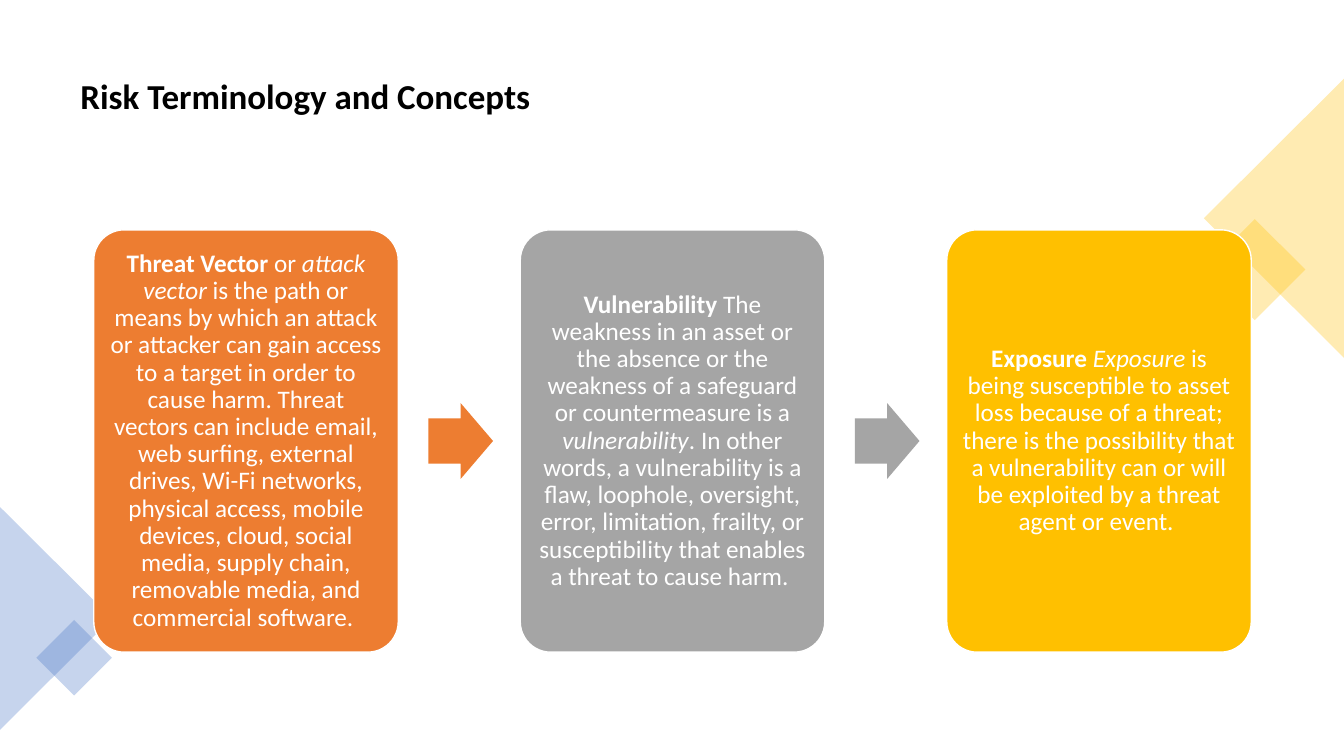
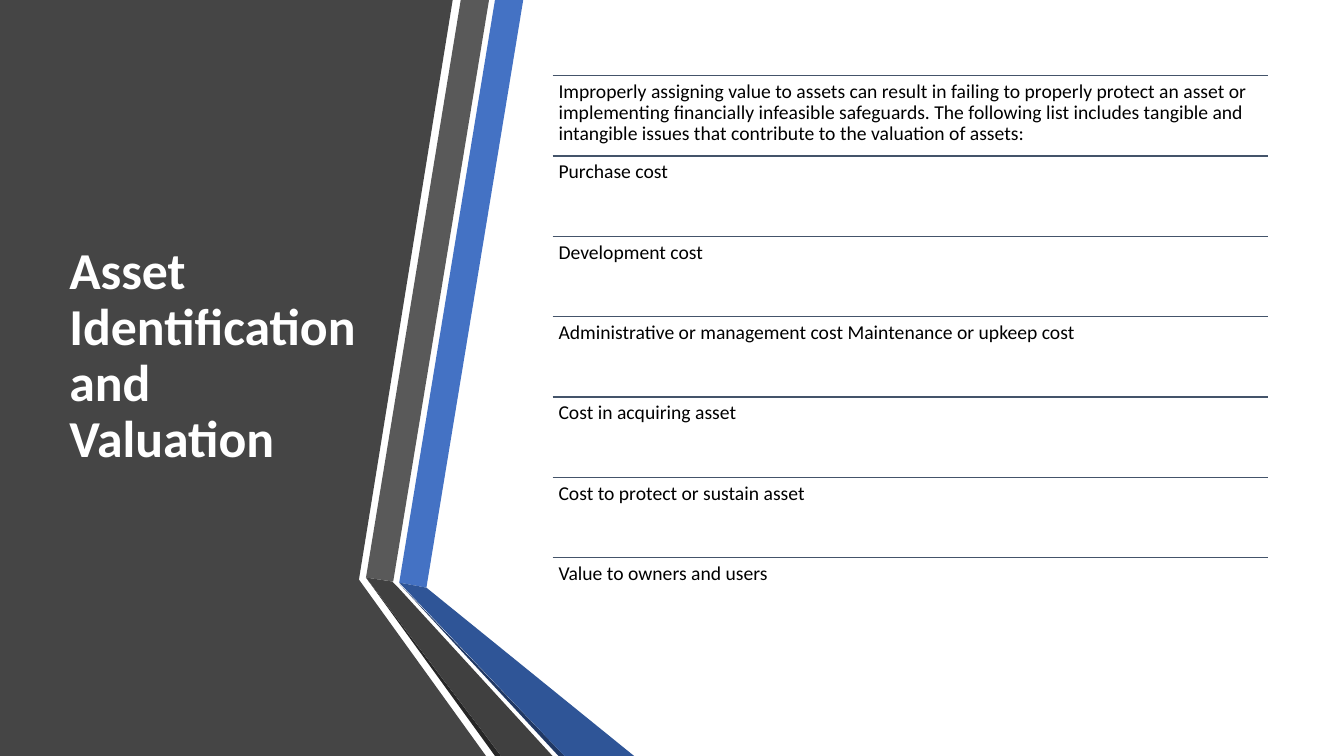
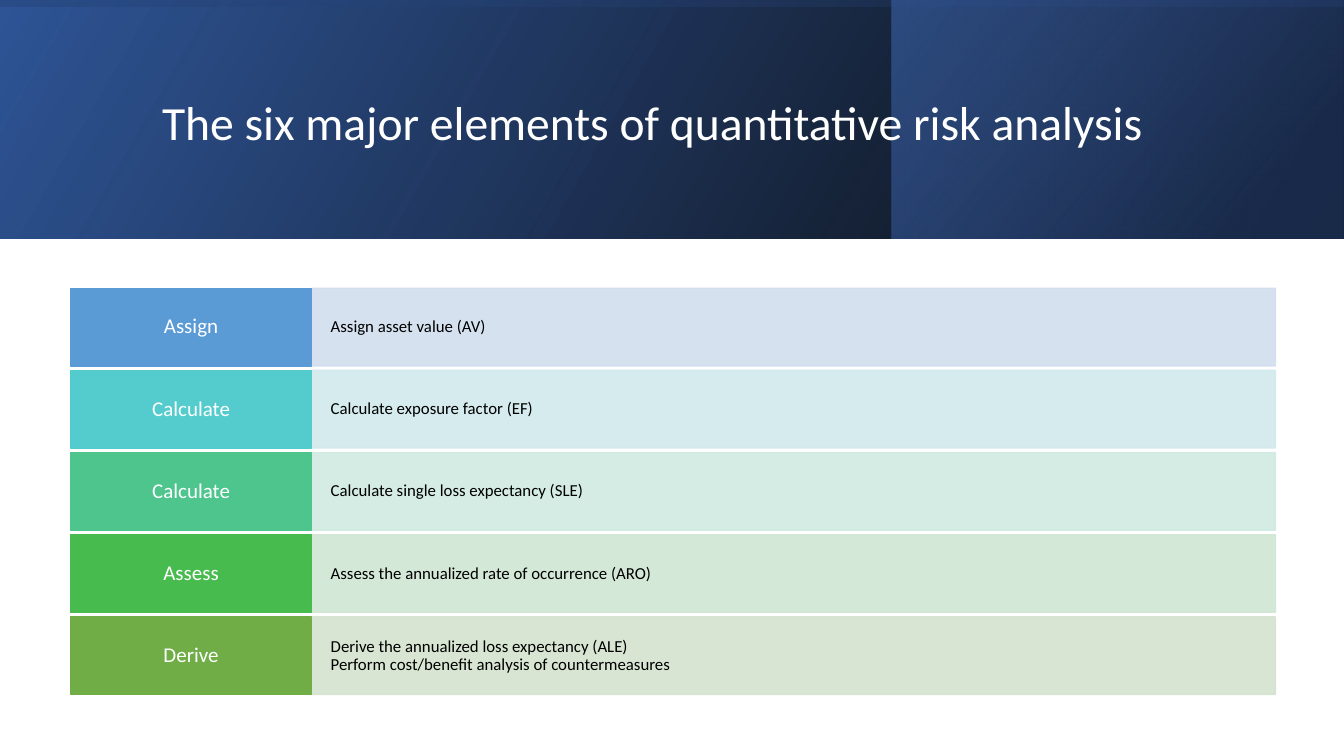
from lxml.etree import SubElement
from pptx import Presentation
from pptx.dml.color import RGBColor
from pptx.enum.shapes import MSO_CONNECTOR, MSO_SHAPE
from pptx.enum.text import MSO_ANCHOR, PP_ALIGN
from pptx.oxml.ns import qn
from pptx.util import Inches, Pt

FONT = "Calibri"
BLACK = RGBColor(0x00, 0x00, 0x00)
WHITE = RGBColor(0xFF, 0xFF, 0xFF)
BLUE = RGBColor(0x44, 0x72, 0xC4)
ROYAL = RGBColor(0x2F, 0x55, 0x97)
NAVY = RGBColor(0x20, 0x38, 0x64)
SLATE = RGBColor(0x44, 0x54, 0x6A)
ORANGE = RGBColor(0xED, 0x7D, 0x31)
SILVER = RGBColor(0xA5, 0xA5, 0xA5)
GOLD = RGBColor(0xFF, 0xC0, 0x00)
PANEL = RGBColor(0x45, 0x45, 0x45)
GREY = RGBColor(0x59, 0x59, 0x59)
DARK = RGBColor(0x40, 0x40, 0x40)
INK = RGBColor(0x26, 0x26, 0x26)

CARDS = [
    (ORANGE, [
        ("Threat Vector ", "b"), ("or ", ""), ("attack vector ", "i"),
        ("is the path or means by which an attack or attacker can gain access "
         "to a target in order to cause harm. Threat vectors can include email, "
         "web surfing, external drives, Wi-Fi networks, physical access, mobile "
         "devices, cloud, social media, supply chain, removable media, and "
         "commercial software. ", "")]),
    (SILVER, [
        ("Vulnerability ", "b"),
        ("The weakness in an asset or the absence or the weakness of a "
         "safeguard or countermeasure is a ", ""), ("vulnerability", "i"),
        (". In other words, a vulnerability is a flaw, loophole, oversight, "
         "error, limitation, frailty, or susceptibility that enables a threat "
         "to cause harm. ", "")]),
    (GOLD, [
        ("Exposure ", "b"), ("Exposure ", "i"),
        ("is being susceptible to asset loss because of a threat; there is the "
         "possibility that a vulnerability can or will be exploited by a threat "
         "agent or event. ", "")]),
]

COSTS = [
    "Improperly assigning value to assets can result in failing to properly "
    "protect an asset or implementing financially infeasible safeguards. The "
    "following list includes tangible and intangible issues that contribute to "
    "the valuation of assets:",
    "Purchase cost",
    "Development cost",
    "Administrative or management cost Maintenance or upkeep cost",
    "Cost in acquiring asset",
    "Cost to protect or sustain asset",
    "Value to owners and users",
]

STEPS = [
    ("Assign", ["Assign asset value (AV)"],
     RGBColor(0x5B, 0x9B, 0xD5), RGBColor(0xD2, 0xDE, 0xEF)),
    ("Calculate", ["Calculate exposure factor (EF)"],
     RGBColor(0x54, 0xCC, 0xCD), RGBColor(0xD1, 0xE9, 0xED)),
    ("Calculate", ["Calculate single loss expectancy (SLE)"],
     RGBColor(0x4D, 0xC5, 0x8D), RGBColor(0xD0, 0xEA, 0xE1)),
    ("Assess", ["Assess the annualized rate of occurrence (ARO)"],
     RGBColor(0x48, 0xBB, 0x4F), RGBColor(0xD0, 0xE6, 0xD4)),
    ("Derive", ["Derive the annualized loss expectancy (ALE)",
                "Perform cost/benefit analysis of countermeasures"],
     RGBColor(0x70, 0xAD, 0x47), RGBColor(0xD5, 0xE3, 0xCF)),
]

BANDS = [
    (PANEL, [(0, 0), (4.49, 0), (3.56, 5.75), (4.82, 7.5), (0, 7.5)]),
    (BLUE, [(3.96, 5.78), (4.23, 5.83), (5.19, 0), (4.91, 0)]),
    (GREY, [(4.85, 0), (4.57, 0), (3.63, 5.73), (3.9, 5.77)]),
    (INK, [(3.63, 5.73), (4.91, 7.5), (4.97, 7.5)]),
    (NAVY, [(3.96, 5.79), (5.54, 7.5), (5.6, 7.5)]),
    (ROYAL, [(3.96, 5.78), (5.6, 7.5), (6.29, 7.5), (4.23, 5.83)]),
    (DARK, [(5.48, 7.5), (3.95, 5.83), (3.89, 5.77), (3.63, 5.73), (4.97, 7.5)]),
]


def write(shape, paras, size=18, color=BLACK, bold=False, align=PP_ALIGN.LEFT,
          anchor=MSO_ANCHOR.MIDDLE, inset=(0.1, 0.05)):
    frame = shape.text_frame
    frame.word_wrap = True
    frame.vertical_anchor = anchor
    frame.margin_left = frame.margin_right = Inches(inset[0])
    frame.margin_top = frame.margin_bottom = Inches(inset[1])
    for num, runs in enumerate(paras):
        para = frame.add_paragraph() if num else frame.paragraphs[0]
        para.alignment = align
        para.line_spacing = 0.9
        if isinstance(runs, str):
            runs = [(runs, "b" if bold else "")]
        for words, mark in runs:
            run = para.add_run()
            run.text = words
            font = run.font
            font.name, font.size, font.color.rgb = FONT, Pt(size), color
            font.bold, font.italic = mark == "b", mark == "i"


def label(slide, box, paras, **style):
    write(slide.shapes.add_textbox(*map(Inches, box)), paras, **style)


def fade(shape, *shares):
    for tone, share in zip(shape.element.spPr.iter(qn("a:srgbClr")), shares):
        SubElement(tone, qn("a:alpha")).set("val", str(share * 1000))


def paint(shape, fill=None, line=None):
    shape.shadow.inherit = False
    if fill is not None:
        shape.fill.solid()
        shape.fill.fore_color.rgb = fill
    if line is None:
        shape.line.fill.background()
    else:
        shape.line.color.rgb = line
        shape.line.width = Pt(1)


def block(slide, kind, box, fill=None, line=None, turn=0):
    shape = slide.shapes.add_shape(kind, *map(Inches, box))
    shape.rotation = turn
    paint(shape, fill, line)
    return shape


def blend(slide, box, angle, stops):
    shape = block(slide, MSO_SHAPE.RECTANGLE, box)
    shape.fill.gradient()
    shape.fill.gradient_angle = angle
    for stop, (place, color, _) in zip(shape.fill.gradient_stops, stops):
        stop.position = place
        stop.color.rgb = color
    fade(shape, *[share for _, _, share in stops])


def rule(slide, left, top, width):
    line = slide.shapes.add_connector(
        MSO_CONNECTOR.STRAIGHT, Inches(left), Inches(top),
        Inches(left + width), Inches(top))
    line.line.color.rgb = SLATE
    line.line.width = Pt(1)
    SubElement(line.element.spPr, qn("a:effectLst"))


def corners(slide):
    for kind, box, turn, color in [
        (MSO_SHAPE.RECTANGLE, (12.09, 2.32, 0.71, 0.71), 45, GOLD),
        (MSO_SHAPE.ISOSCELES_TRIANGLE, (11.25, 1.47, 2.77, 1.39), 270, GOLD),
        (MSO_SHAPE.ISOSCELES_TRIANGLE, (-0.55, 5.58, 2.21, 1.11), 90, BLUE),
        (MSO_SHAPE.RECTANGLE, (0.47, 6.26, 0.53, 0.53), 45, BLUE),
    ]:
        fade(block(slide, kind, box, color, turn=turn), 30)


def flow(slide, left, top, width, height):
    card = 3.02
    pitch = (width - card) / (len(CARDS) - 1)
    for num, (color, runs) in enumerate(CARDS):
        x = left + num * pitch
        shape = block(slide, MSO_SHAPE.ROUNDED_RECTANGLE,
                      (x, top, card, height), color, WHITE)
        shape.adjustments[0] = 0.1
        write(shape, [runs], color=WHITE, align=PP_ALIGN.CENTER,
              inset=(0.07, 0.07))
        if num < len(CARDS) - 1:
            arrow = block(slide, MSO_SHAPE.RIGHT_ARROW,
                          (x + card + 0.3, top + height / 2 - 0.375, 0.64, 0.75),
                          color)
            arrow.adjustments[0] = 0.6
            arrow.adjustments[1] = 0.5


def bands(slide):
    for color, points in BANDS:
        spots = [(Inches(x), Inches(y)) for x, y in points]
        path = slide.shapes.build_freeform(*spots[0])
        path.add_line_segments(spots[1:])
        paint(path.convert_to_shape(), color)


def ledger(slide, left, top, width, height):
    pitch = height / len(COSTS)
    for num, cost in enumerate(COSTS):
        y = top + num * pitch
        rule(slide, left, y, width)
        label(slide, (left, y, width, pitch), [cost], size=14,
              anchor=MSO_ANCHOR.TOP, inset=(0.06, 0.06))


def banner(slide, left, top, width, height):
    blend(slide, (left, top, width, height), 150,
          [(0, BLACK, 96), (1, ROYAL, 100)])
    blend(slide, (left + 8.84, top, 4.48, height), 140,
          [(0.19, NAVY, 68), (1, BLUE, 48)])
    blend(slide, (left, top, width, height), 260,
          [(0.23, ROYAL, 16), (0.99, BLACK, 45)])


def steps(slide, left, top, width, height):
    row, head = 0.77, 2.39
    pitch = (height - row) / (len(STEPS) - 1)
    for num, (verb, lines, deep, pale) in enumerate(STEPS):
        y = top + num * pitch
        body = block(slide, MSO_SHAPE.RECTANGLE,
                     (left + head, y, width - head, row), pale, pale)
        fade(body, 90, 90)
        write(body, lines, size=12, inset=(0.19, 0.2))
        tag = block(slide, MSO_SHAPE.RECTANGLE, (left, y, head, row), deep, deep)
        write(tag, [verb], size=15, color=WHITE, align=PP_ALIGN.CENTER,
              inset=(0.13, 0.08))


def terms(slide):
    label(slide, (0.7, 0.35, 11.93, 1.24), ["Risk Terminology and Concepts"],
          size=25, bold=True)
    corners(slide)
    flow(slide, 0.93, 2.28, 11.48, 4.19)


def assets(slide):
    bands(slide)
    label(slide, (0.59, 0.75, 3.04, 5.58),
          ["Asset Identification and Valuation"],
          size=37, color=WHITE, bold=True)
    ledger(slide, 5.48, 0.75, 7.1, 5.58)


def risk(slide):
    banner(slide, 0, 0, 13.33, 2.37)
    label(slide, (1.51, 0.38, 10.63, 1.72),
          ["The six major elements of quantitative risk analysis"],
          size=34, color=WHITE)
    steps(slide, 0.7, 2.86, 11.95, 4.03)


def main():
    deck = Presentation()
    deck.slide_width, deck.slide_height = Inches(13.33), Inches(7.5)
    for build in (terms, assets, risk):
        build(deck.slides.add_slide(deck.slide_layouts[6]))
    deck.save("out.pptx")


if __name__ == "__main__":
    main()
